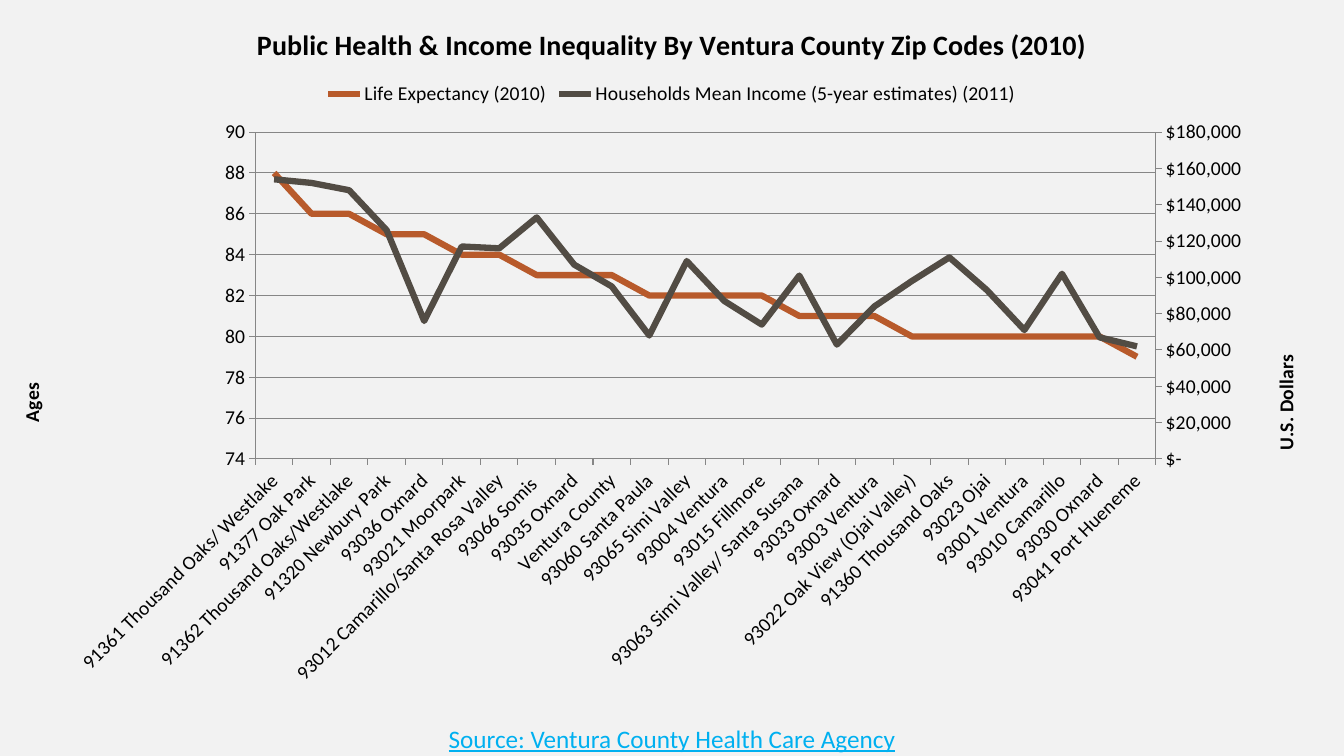
from copy import deepcopy

from lxml import etree
from pptx import Presentation, util as u
from pptx.chart.axis import ValueAxis
from pptx.chart.data import CategoryChartData
from pptx.dml.color import RGBColor
from pptx.enum import chart as ch, text
from pptx.oxml import parse_xml
from pptx.oxml.ns import nsdecls, qn

BACKGROUND = RGBColor(0xF2, 0xF2, 0xF2)
BLACK = RGBColor(0, 0, 0)
GREY = RGBColor(0x86, 0x86, 0x86)
RUST = RGBColor(0xB8, 0x5A, 0x2B)
TAUPE = RGBColor(0x52, 0x4C, 0x44)
LINK_BLUE = RGBColor(0x00, 0xB0, 0xF0)
FONT = "Calibri"

AREAS = [
    ("91361 Thousand Oaks/ Westlake", 88, 154000),
    ("91377 Oak Park", 86, 152000),
    ("91362 Thousand Oaks/Westlake", 86, 148000),
    ("91320 Newbury Park", 85, 126000),
    ("93036 Oxnard", 85, 76000),
    ("93021 Moorpark", 84, 117000),
    ("93012 Camarillo/Santa Rosa Valley", 84, 116000),
    ("93066 Somis ", 83, 133000),
    ("93035 Oxnard", 83, 107000),
    ("Ventura County", 83, 95000),
    ("93060 Santa Paula", 82, 68000),
    ("93065 Simi Valley", 82, 109000),
    ("93004 Ventura", 82, 87000),
    ("93015 Fillmore", 82, 74000),
    ("93063 Simi Valley/ Santa Susana", 81, 101000),
    ("93033 Oxnard", 81, 63000),
    ("93003 Ventura", 81, 84000),
    ("93022 Oak View (Ojai Valley)", 80, 98000),
    ("91360 Thousand Oaks", 80, 111000),
    ("93023 Ojai", 80, 93000),
    ("93001 Ventura", 80, 71000),
    ("93010 Camarillo", 80, 102000),
    ("93030 Oxnard", 80, 67000),
    ("93041 Port Hueneme", 79, 62000),
]


def style_font(font, size, bold=False, color=BLACK):
    font.name = FONT
    font.size = u.Pt(size)
    font.bold = bold
    font.color.rgb = color


def write_title(tf, words, size):
    r = tf.paragraphs[0].add_run()
    r.text = words
    style_font(r.font, size, bold=True)


def style_axis(axis):
    style_font(axis.tick_labels.font, 14)
    axis.major_tick_mark = ch.XL_TICK_MARK.OUTSIDE
    axis.minor_tick_mark = ch.XL_TICK_MARK.NONE
    axis.format.line.color.rgb = GREY
    axis.format.line.width = u.Pt(0.75)


def style_value_axis(axis, words, low, high, step, number_format):
    style_axis(axis)
    axis.minimum_scale, axis.maximum_scale = low, high
    axis.major_unit = step
    axis.tick_labels.number_format = number_format
    axis.tick_labels.number_format_is_linked = False
    tf = axis.axis_title.text_frame
    write_title(tf, words, 14)
    body = tf._txBody.find(qn("a:bodyPr"))
    body.set("rot", "-5400000")
    body.set("vert", "horz")


def add_right_axis(chart):
    plot_area = chart._chartSpace.chart.plotArea
    left_plot = plot_area.find(qn("c:lineChart"))
    right_plot = deepcopy(left_plot)
    left_plot.remove(left_plot.findall(qn("c:ser"))[1])
    right_plot.remove(right_plot.findall(qn("c:ser"))[0])
    left_plot.addnext(right_plot)

    left_axis = plot_area.find(qn("c:valAx"))
    cat = deepcopy(plot_area.find(qn("c:catAx")))
    val = deepcopy(left_axis)
    ids = {"cat": "50010", "val": "50020"}
    for ref, name in zip(right_plot.findall(qn("c:axId")), ("cat", "val")):
        ref.set("val", ids[name])
    for axis, own, other in ((cat, "cat", "val"), (val, "val", "cat")):
        axis.find(qn("c:axId")).set("val", ids[own])
        axis.find(qn("c:crossAx")).set("val", ids[other])
    cat.find(qn("c:delete")).set("val", "1")
    val.find(qn("c:axPos")).set("val", "r")
    val.find(qn("c:crosses")).set("val", "max")
    left_axis.addnext(val)
    val.addnext(cat)
    return ValueAxis(val)


def set_plot_box(chart, x, y, w, h):
    plot_area = chart._chartSpace.chart.plotArea
    for old in plot_area.findall(qn("c:layout")):
        plot_area.remove(old)
    layout = parse_xml(f"<c:layout {nsdecls('c')}/>")
    manual = etree.SubElement(layout, qn("c:manualLayout"))
    settings = (("layoutTarget", "inner"), ("xMode", "edge"), ("yMode", "edge"),
                ("x", x), ("y", y), ("w", w), ("h", h))
    for tag, value in settings:
        etree.SubElement(manual, qn(f"c:{tag}")).set("val", str(value))
    plot_area.insert(0, layout)


def add_income_chart(s, x, y, w, h):
    names, ages, incomes = zip(*AREAS)
    data = CategoryChartData()
    data.categories = names
    data.add_series("Life Expectancy (2010)", ages)
    data.add_series("Households Mean Income (5-year estimates) (2011)", incomes)
    chart = s.shapes.add_chart(ch.XL_CHART_TYPE.LINE, x, y, w, h, data).chart
    style_font(chart.font, 18)

    chart.has_title = True
    write_title(chart.chart_title.text_frame,
                "Public Health & Income Inequality By Ventura County Zip Codes (2010)", 20)
    chart.chart_title.include_in_layout = False
    chart.has_legend = True
    chart.legend.position = ch.XL_LEGEND_POSITION.TOP
    chart.legend.include_in_layout = False
    style_font(chart.legend.font, 14)

    chart.plots[0].vary_by_categories = False
    for series, color in zip(chart.plots[0].series, (RUST, TAUPE)):
        series.smooth = False
        series.marker.style = ch.XL_MARKER_STYLE.NONE
        series.format.line.color.rgb = color
        series.format.line.width = u.Pt(4.5)

    left = chart.value_axis
    right = add_right_axis(chart)
    style_value_axis(left, "Ages", 74, 90, 2, "0")
    style_value_axis(right, "U.S. Dollars", 0, 180000, 20000, '"$"#,##0;-"$"#,##0;"$-"')
    left.has_major_gridlines = True
    left.major_gridlines.format.line.color.rgb = GREY
    left.major_gridlines.format.line.width = u.Pt(0.75)
    right.has_major_gridlines = False

    style_axis(chart.category_axis)
    labels = chart.category_axis._element.find(qn("c:txPr"))
    labels.find(qn("a:bodyPr")).set("rot", "-2700000")
    set_plot_box(chart, 0.19, 0.19, 0.67, 0.47)


def add_source(s, x, y, w, h):
    tf = s.shapes.add_textbox(x, y, w, h).text_frame
    tf.word_wrap = True
    p = tf.paragraphs[0]
    p.alignment = text.PP_ALIGN.CENTER
    r = p.add_run()
    r.text = "Source: Ventura County Health Care Agency"
    style_font(r.font, 18, color=LINK_BLUE)
    r.font.underline = True


def main():
    prs = Presentation()
    prs.slide_width, prs.slide_height = u.Inches(13.33), u.Inches(7.5)
    width, height = prs.slide_width, prs.slide_height
    s = prs.slides.add_slide(prs.slide_layouts[6])
    s.background.fill.solid()
    s.background.fill.fore_color.rgb = BACKGROUND
    add_income_chart(s, 0, 0, width, int(height * 0.92))
    add_source(s, 0, int(height * 0.95), width, u.Inches(0.4))
    prs.save("out.pptx")


if __name__ == "__main__":
    main()
